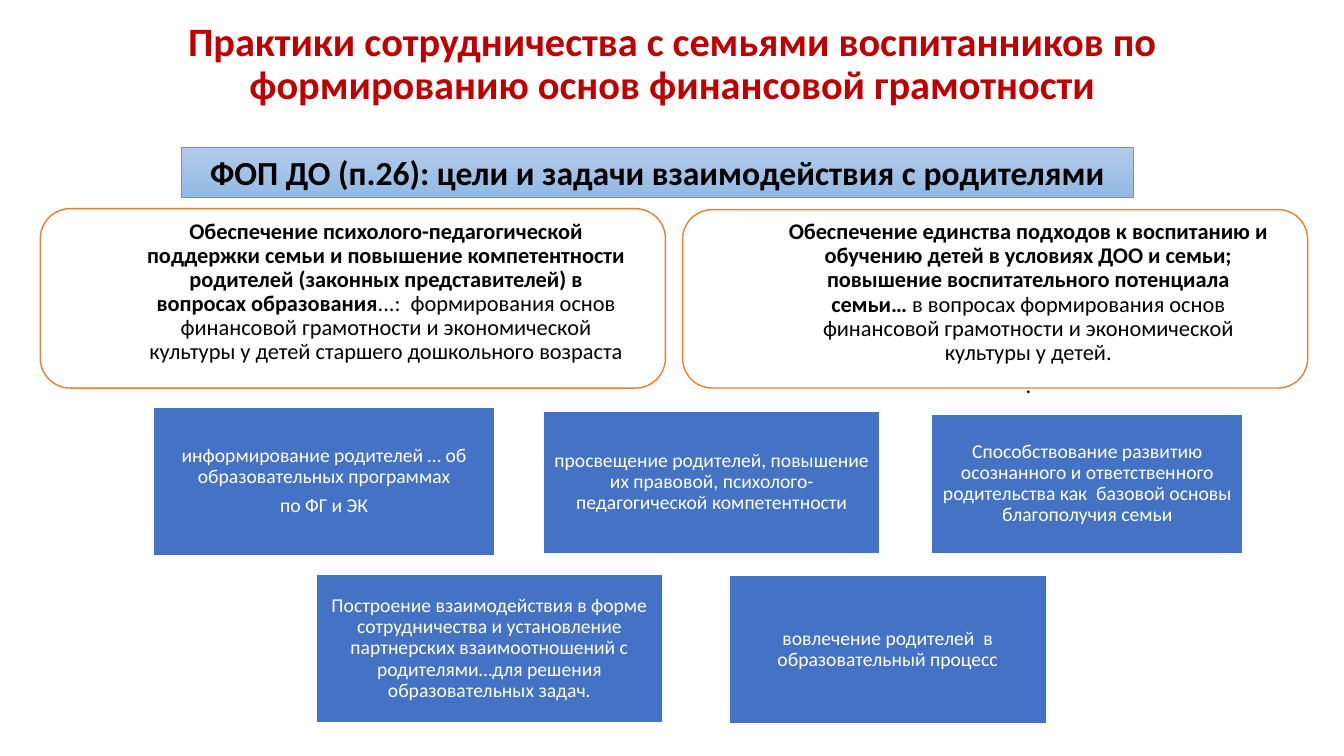
from pptx import Presentation
from pptx.dml.color import RGBColor
from pptx.enum.shapes import MSO_SHAPE
from pptx.enum.text import MSO_ANCHOR, PP_ALIGN
from pptx.util import Inches, Pt


def color(code):
    return RGBColor.from_string(code)


def write(shape, paras, size, ink, insets, gap=0, lead=0.9, anchor=MSO_ANCHOR.MIDDLE):
    frame = shape.text_frame
    frame.word_wrap = True
    frame.vertical_anchor = anchor
    (frame.margin_left, frame.margin_top,
     frame.margin_right, frame.margin_bottom) = [Inches(n) for n in insets]
    for i, runs in enumerate(paras):
        para = frame.add_paragraph() if i else frame.paragraphs[0]
        para.alignment = PP_ALIGN.CENTER
        para.line_spacing = lead
        para.space_after = Pt(gap)
        para.font.name = "Calibri"
        para.font.size = Pt(size)
        para.font.color.rgb = color(ink)
        for text, bold in runs:
            run = para.add_run()
            run.text = text
            run.font.bold = bold


deck = Presentation()
deck.slide_width = Inches(13.33)
deck.slide_height = Inches(7.5)
slide = deck.slides.add_slide(deck.slide_layouts[6])
shapes = slide.shapes
normal = (0.1, 0.05, 0.1, 0.05)

title = shapes.add_textbox(Inches(0.92), Inches(0.17), Inches(11.5), Inches(0.95))
write(title, [[("Практики сотрудничества с семьями воспитанников по "
                "формированию основ финансовой грамотности", True)]],
      28.8, "C00000", normal)

banner = shapes.add_shape(MSO_SHAPE.RECTANGLE, Inches(1.8), Inches(1.46),
                          Inches(9.44), Inches(0.5))
banner.shadow.inherit = False
banner.fill.gradient()
banner.fill.gradient_angle = 270
for stop, code in zip(banner.fill.gradient_stops, ("B1CBE9", "93B9E4")):
    stop.color.rgb = color(code)
banner.line.color.rgb = color("5B9BD5")
banner.line.width = Pt(0.5)
write(banner, [[("ФОП ДО (п.26): цели и задачи взаимодействия с родителями", True)]],
      24, "000000", normal, lead=1, anchor=MSO_ANCHOR.TOP)

goals = [
    (0.4, 2.07, 1.78, 0.48, [[
        ("Обеспечение психолого-педагогической поддержки семьи и повышение "
         "компетентности родителей (законных представителей) в вопросах образования", True),
        ("...:  формирования основ финансовой грамотности и экономической "
         "культуры у детей старшего дошкольного возраста", False)]]),
    (6.77, 2.08, 1.77, 0.81, [[
        ("Обеспечение единства подходов к воспитанию и обучению детей в условиях "
         "ДОО и семьи; повышение воспитательного потенциала семьи…", True),
        (" в вопросах формирования основ финансовой грамотности и экономической "
         "культуры у детей.", False)], [(".", False)]]),
]
tasks = [
    (1.52, 4.04, 3.39, 1.47, ["информирование родителей … об образовательных программах",
                              "по ФГ и ЭК"]),
    (5.39, 4.08, 3.34, 1.41, ["просвещение родителей, повышение их правовой, "
                              "психолого-педагогической компетентности"]),
    (9.24, 4.11, 3.09, 1.38, ["Способствование развитию осознанного и ответственного "
                              "родительства как  базовой основы благополучия семьи"]),
    (3.14, 5.7, 3.43, 1.47, ["Построение взаимодействия в форме сотрудничества и "
                             "установление партнерских взаимоотношений с "
                             "родителями…для решения образовательных задач."]),
    (7.23, 5.71, 3.15, 1.47, ["вовлечение родителей  в образовательный процесс"]),
]
cards = [(MSO_SHAPE.ROUNDED_RECTANGLE, (x, y, 6.2, h), "FFFFFF", "ED7D31",
          paras, 16, "000000", (0.96, top, 0.3, 0.6))
         for x, y, h, top, paras in goals]
cards += [(MSO_SHAPE.RECTANGLE, (x, y, w, h), "4472C4", "FFFFFF",
           [[(text, False)] for text in texts], 14, "FFFFFF", (0.06,) * 4)
          for x, y, w, h, texts in tasks]

for kind, place, fill, edge, paras, size, ink, insets in cards:
    card = shapes.add_shape(kind, *[Inches(n) for n in place])
    card.shadow.inherit = False
    card.fill.solid()
    card.fill.fore_color.rgb = color(fill)
    card.line.color.rgb = color(edge)
    card.line.width = Pt(1)
    write(card, paras, size, ink, insets, gap=size * 0.4)

deck.save("out.pptx")
